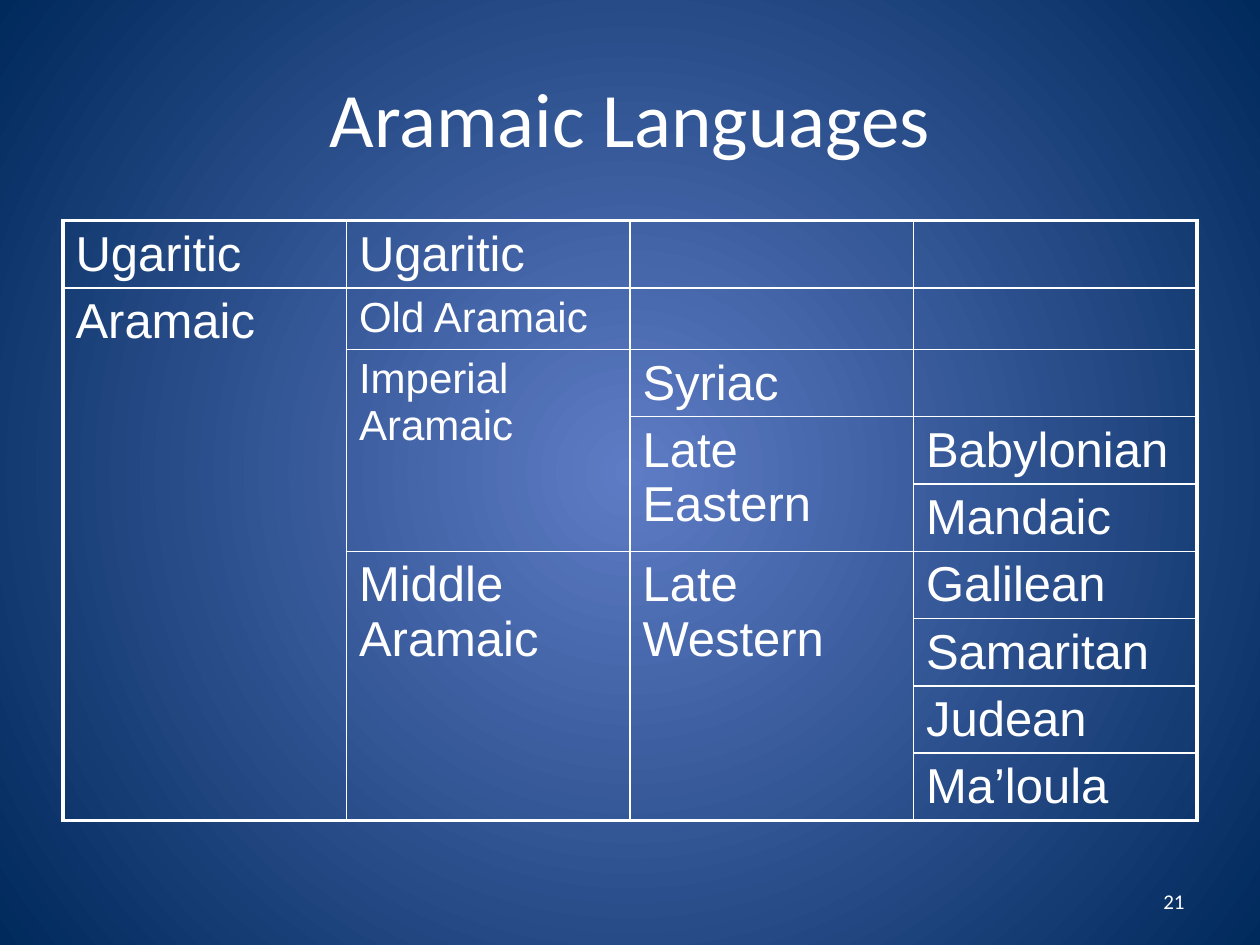
from lxml.etree import SubElement
from pptx import Presentation
from pptx.dml.color import RGBColor
from pptx.enum.text import MSO_ANCHOR, PP_ALIGN
from pptx.oxml import parse_xml
from pptx.oxml.ns import nsdecls, qn
from pptx.util import Inches, Pt

COLORS = {"text": "FFFFFF", "center": "5E7CC5", "edge": "00295C"}
COLS, ROWS = 4, 9
COL_W, ROW_H = 2.25, 0.49
OUTER, INNER = 2.25, 1

# (row, column, row span, text, size)
LANGUAGES = [
    (0, 0, 1, "Ugaritic", 28),
    (0, 1, 1, "Ugaritic", 28),
    (1, 0, 8, "Aramaic", 28),
    (1, 1, 1, "Old Aramaic", 24),
    (2, 1, 3, "Imperial Aramaic", 24),
    (2, 2, 1, "Syriac", 28),
    (3, 2, 2, "Late Eastern", 28),
    (3, 3, 1, "Babylonian", 28),
    (4, 3, 1, "Mandaic", 28),
    (5, 1, 4, "Middle Aramaic", 28),
    (5, 2, 4, "Late Western", 28),
    (5, 3, 1, "Galilean", 28),
    (6, 3, 1, "Samaritan", 28),
    (7, 3, 1, "Judean", 28),
    (8, 3, 1, "Ma’loula", 28),
]


def set_background(s):
    """Radial gradient from the slide centre to its corners."""
    fill = s.background.fill
    fill.gradient()
    for stop, position, name in zip(fill.gradient_stops, (0, 1), ("center", "edge")):
        stop.position = position
        stop.color.rgb = RGBColor.from_string(COLORS[name])
    grad = s.element.find(".//" + qn("a:gradFill"))
    grad.replace(grad.find(qn("a:lin")), parse_xml(
        f'<a:path {nsdecls("a")} path="circle">'
        '<a:fillToRect l="50000" t="50000" r="50000" b="50000"/></a:path>'))


def set_text(tf, text, size, font, align):
    tf.text = text
    tf.word_wrap = True
    p = tf.paragraphs[0]
    p.alignment = align
    p.font.size = Pt(size)
    p.font.name = font
    p.font.color.rgb = RGBColor.from_string(COLORS["text"])
    return p


def place(sp, left, top, width, height):
    sp.left, sp.top = Inches(left), Inches(top)
    sp.width, sp.height = Inches(width), Inches(height)


def add_title(s, text):
    title = s.shapes.title
    place(title, 0.5, 0.3, 9, 1.25)
    title.text_frame.vertical_anchor = MSO_ANCHOR.MIDDLE
    set_text(title.text_frame, text, 44, "Calibri", PP_ALIGN.CENTER)


def add_page_number(s, number):
    box = s.shapes.add_textbox(Inches(7.17), Inches(6.95), Inches(2.33), Inches(0.4))
    box.text_frame.vertical_anchor = MSO_ANCHOR.MIDDLE
    set_text(box.text_frame, number, 12, "Calibri", PP_ALIGN.RIGHT)


def set_borders(cell, row, col, span):
    """Heavy lines on the table's outer edge, thin lines inside."""
    on_edge = {"L": col == 0, "R": col == COLS - 1,
               "T": row == 0, "B": row + span == ROWS}
    tc_pr = cell._tc.get_or_add_tcPr()
    for i, (side, outer) in enumerate(on_edge.items()):
        tc_pr.insert(i, parse_xml(
            f'<a:ln{side} {nsdecls("a")} w="{Pt(OUTER if outer else INNER)}">'
            f'<a:solidFill><a:srgbClr val="{COLORS["text"]}"/></a:solidFill>'
            f'</a:ln{side}>'))


def set_space_before(p, percent):
    p_pr = p._p.get_or_add_pPr()
    space = SubElement(p_pr, qn("a:spcBef"))
    SubElement(space, qn("a:spcPct")).set("val", str(percent * 1000))
    p_pr.insert(0, space)


def add_language_table(s):
    frame = s.shapes.add_table(ROWS, COLS, Inches(0.5), Inches(1.75),
                               Inches(COLS * COL_W), Inches(ROWS * ROW_H))
    table = frame.table
    table.first_row = table.horz_banding = False
    for row in table.rows:
        row.height = Inches(ROW_H)

    spans = {}
    for row, col, span, text, size in LANGUAGES:
        cell = table.cell(row, col)
        if span > 1:
            cell.merge(table.cell(row + span - 1, col))
        spans[row, col] = span
        p = set_text(cell.text_frame, text, size, "Arial", PP_ALIGN.LEFT)
        set_space_before(p, 20)

    for row in range(ROWS):
        for col in range(COLS):
            cell = table.cell(row, col)
            cell.fill.background()
            set_borders(cell, row, col, spans.get((row, col), 1))


def main():
    prs = Presentation()
    prs.slide_width, prs.slide_height = Inches(10), Inches(7.5)
    s = prs.slides.add_slide(prs.slide_layouts[5])
    set_background(s)
    add_title(s, "Aramaic Languages")
    add_language_table(s)
    add_page_number(s, "21")
    prs.save("out.pptx")


if __name__ == "__main__":
    main()
